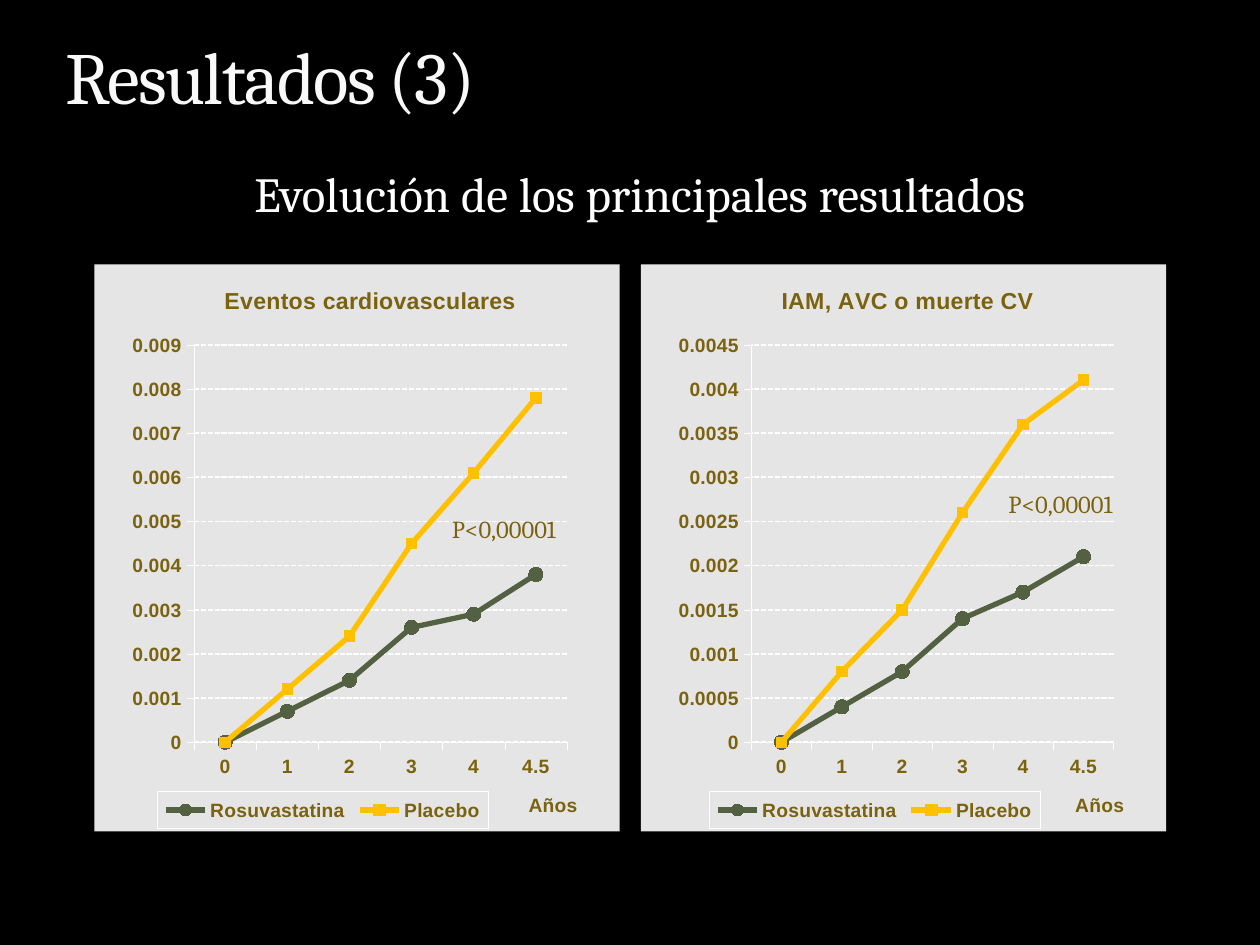
import pptx
import pptx.chart.data
import pptx.dml.color
import pptx.enum.chart
import pptx.enum.dml
import pptx.enum.text
import pptx.oxml
import pptx.oxml.ns
import pptx.util
from pptx.util import Cm

THEME = {
    "background": "000000", "title": "F9F9F9", "title_outline": "3C4422",
    "subtitle": "FFFFFF", "panel": "E5E5E5", "chart_text": "7A620E", "rule": "FFFFFF",
    "text_font": "Cambria", "chart_font": "Arial",
    "title_size": 42, "subtitle_size": 28, "note_size": 14,
    "chart_size": 11, "chart_title_size": 13.2,
}
TITLE = "Resultados (3)"
SUBTITLE = "Evolución de los principales resultados"
NOTE = "P<0,00001"
AXIS_TITLE = "Años"
YEARS = [0, 1, 2, 3, 4, 4.5]
MARKERS = pptx.enum.chart.XL_MARKER_STYLE
SERIES_STYLES = {
    "Rosuvastatina": ("536142", MARKERS.CIRCLE, 8, "A5B592"),
    "Placebo": ("FFC000", MARKERS.SQUARE, 6, "F3A447"),
}
CHARTS = [
    {"title": "Eventos cardiovasculares", "maximum": 0.009, "step": 0.001,
     "values": {"Rosuvastatina": [0, 0.0007, 0.0014, 0.0026, 0.0029, 0.0038],
                "Placebo": [0, 0.0012, 0.0024, 0.0045, 0.0061, 0.0078]},
     "title_x": 0.24, "plot_x": 0.19, "plot_width": 0.71, "legend_x": 0.12,
     "note": (6.96, 4.91)},
    {"title": "IAM, AVC o muerte CV", "maximum": 0.0045, "step": 0.0005,
     "values": {"Rosuvastatina": [0, 0.0004, 0.0008, 0.0014, 0.0017, 0.0021],
                "Placebo": [0, 0.0008, 0.0015, 0.0026, 0.0036, 0.0041]},
     "title_x": 0.26, "plot_x": 0.21, "plot_width": 0.69, "legend_x": 0.13,
     "note": (7.16, 4.4)},
]
CHART_LEFT, CHART_TOP = 1.9, 5.33
CHART_WIDTH, CHART_HEIGHT, CHART_GAP = 10.59, 11.43, 0.43


def color(name):
    return pptx.dml.color.RGBColor.from_string(THEME.get(name, name))


def paint(fill, name):
    fill.solid()
    fill.fore_color.rgb = color(name)


def draw_line(line, name, width):
    paint(line.fill, name)
    line.width = pptx.util.Pt(width)


def set_font(font, family, size, name, bold=False):
    font.name = THEME[family]
    font.size = pptx.util.Pt(THEME[size])
    font.bold = bold
    font.color.rgb = color(name)


def add_run(paragraph, text, *style, bold=False):
    run = paragraph.add_run()
    run.text = text
    set_font(run.font, *style, bold=bold)
    return run


def add_text(slide, text, size, name, box, wrap):
    frame = slide.shapes.add_textbox(*map(Cm, box)).text_frame
    frame.word_wrap = wrap
    frame.auto_size = pptx.enum.text.MSO_AUTO_SIZE.SHAPE_TO_FIT_TEXT
    add_run(frame.paragraphs[0], text, "text_font", size, name)


def set_layout(element, x, y, width=None, height=None, inner=False):
    qn = pptx.oxml.ns.qn
    for old in element.findall(qn("c:layout")):
        element.remove(old)
    target = '<c:layoutTarget val="inner"/>' if inner else ""
    modes = '<c:xMode val="edge"/><c:yMode val="edge"/>'
    places = zip("xywh", (x, y, width, height))
    values = "".join(f'<c:{tag} val="{value}"/>' for tag, value in places if value is not None)
    layout = pptx.oxml.parse_xml(
        f'<c:layout {pptx.oxml.ns.nsdecls("c")}><c:manualLayout>'
        f"{target}{modes}{values}</c:manualLayout></c:layout>")
    leading = [child for child in element if child.tag in (qn("c:tx"), qn("c:legendPos"))]
    element.insert(len(leading), layout)


def add_title(owner, text, size, x, y):
    owner.has_title = True
    title = getattr(owner, "chart_title", None) or owner.axis_title
    paragraph = title.text_frame.paragraphs[0]
    add_run(paragraph, text, "chart_font", size, "chart_text", bold=True)
    set_layout(title._element, x, y)


def add_chart(slide, content, left):
    data = pptx.chart.data.CategoryChartData()
    data.categories = YEARS
    for name, values in content["values"].items():
        data.add_series(name, values)
    box = map(Cm, (left, CHART_TOP, CHART_WIDTH, CHART_HEIGHT))
    chart = slide.shapes.add_chart(
        pptx.enum.chart.XL_CHART_TYPE.LINE_MARKERS, *box, data).chart
    set_font(chart.font, "chart_font", "chart_size", "chart_text", bold=True)
    add_title(chart, content["title"], "chart_title_size", content["title_x"], 0.03)

    for axis in (chart.category_axis, chart.value_axis):
        draw_line(axis.format.line, "rule", 0.25)
        axis.major_tick_mark = pptx.enum.chart.XL_TICK_MARK.OUTSIDE
        axis.tick_labels.number_format = "General"
        axis.tick_labels.number_format_is_linked = False
    add_title(chart.category_axis, AXIS_TITLE, "chart_size", 0.82, 0.925)
    value_axis = chart.value_axis
    value_axis.minimum_scale = 0
    value_axis.maximum_scale = content["maximum"]
    value_axis.major_unit = content["step"]
    grid = value_axis.major_gridlines.format.line
    draw_line(grid, "rule", 1)
    grid.dash_style = pptx.enum.dml.MSO_LINE.SQUARE_DOT

    for series in chart.plots[0].series:
        line_color, style, size, marker_color = SERIES_STYLES[series.name]
        series.smooth = False
        draw_line(series.format.line, line_color, 3)
        series.marker.style = style
        series.marker.size = size
        paint(series.marker.format.fill, marker_color)
        draw_line(series.marker.format.line, line_color, 0.75)

    chart.has_legend = True
    legend = chart.legend
    legend.position = pptx.enum.chart.XL_LEGEND_POSITION.RIGHT
    legend.include_in_layout = False
    set_font(legend.font, "chart_font", "chart_size", "chart_text", bold=True)
    set_layout(legend._element, content["legend_x"], 0.93, 0.63, 0.065)
    add_shape_properties(legend._element, "rule", "c:txPr")
    plot_area = chart._chartSpace.chart.plotArea
    set_layout(plot_area, content["plot_x"], 0.142, content["plot_width"], 0.701, inner=True)
    add_shape_properties(chart._chartSpace, None, "c:txPr", "panel")


def add_shape_properties(element, line, successor, fill=None):
    def solid(name):
        return f'<a:solidFill><a:srgbClr val="{THEME[name]}"/></a:solidFill>' if name else "<a:noFill/>"
    properties = pptx.oxml.parse_xml(
        f'<c:spPr {pptx.oxml.ns.nsdecls("c", "a")}>{solid(fill)}'
        f'<a:ln w="3175">{solid(line)}</a:ln></c:spPr>')
    element.find(pptx.oxml.ns.qn(successor)).addprevious(properties)


def main():
    presentation = pptx.Presentation()
    presentation.slide_width, presentation.slide_height = Cm(25.4), Cm(19.05)
    slide = presentation.slides.add_slide(presentation.slide_layouts[5])
    paint(slide.background.fill, "background")

    title = slide.shapes.title
    title.left, title.top, title.width, title.height = map(Cm, (1.07, 0.43, 22.86, 2.11))
    frame = title.text_frame
    frame.vertical_anchor = pptx.enum.text.MSO_ANCHOR.BOTTOM
    frame.auto_size = pptx.enum.text.MSO_AUTO_SIZE.NONE
    frame.paragraphs[0].alignment = pptx.enum.text.PP_ALIGN.LEFT
    run = add_run(frame.paragraphs[0], TITLE, "text_font", "title_size", "title")
    properties = run.font._element
    properties.set("spc", "-100")
    properties.insert(0, pptx.oxml.parse_xml(
        f'<a:ln {pptx.oxml.ns.nsdecls("a")} w="3175"><a:solidFill>'
        f'<a:srgbClr val="{THEME["title_outline"]}"><a:alpha val="25000"/></a:srgbClr>'
        '</a:solidFill></a:ln>'))

    add_text(slide, SUBTITLE, "subtitle_size", "subtitle", (4.88, 3.18, 17.3, 1.45), False)
    for index, content in enumerate(CHARTS):
        left = CHART_LEFT + index * (CHART_WIDTH + CHART_GAP)
        add_chart(slide, content, left)
        note_x, note_y = content["note"]
        box = (left + note_x, CHART_TOP + note_y, 2.77, 0.86)
        add_text(slide, NOTE, "note_size", "chart_text", box, True)
    presentation.save("out.pptx")


if __name__ == "__main__":
    main()
